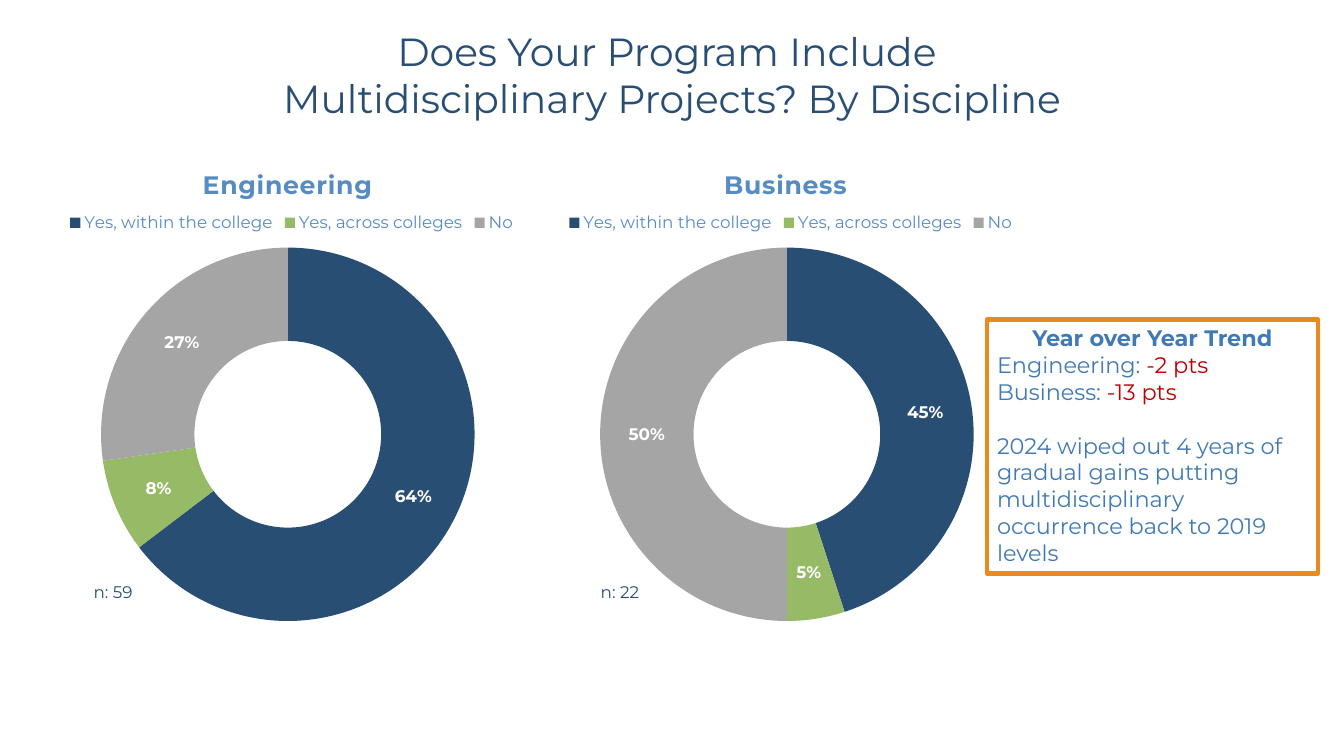
import pptx
import pptx.chart.data
import pptx.dml.color
import pptx.enum.chart
import pptx.enum.shapes
import pptx.enum.text
import pptx.oxml
import pptx.oxml.ns
import pptx.util

Inches = pptx.util.Inches
Pt = pptx.util.Pt
CENTER = pptx.enum.text.PP_ALIGN.CENTER

COLORS = {
    "navy": "294E73",
    "green": "96BA65",
    "gray": "A5A5A5",
    "sky": "558CC3",
    "blue": "407AB4",
    "red": "C00000",
    "orange": "EB891C",
    "white": "FFFFFF",
}
ANSWERS = {
    "Yes, within the college": "navy",
    "Yes, across colleges": "green",
    "No": "gray",
}


class SurveySlide:
    font_name = "Montserrat"

    def __init__(self, deck):
        self.slide = deck.slides.add_slide(deck.slide_layouts[6])

    def color(self, name):
        return pptx.dml.color.RGBColor.from_string(COLORS[name])

    def style(self, font, size, color, bold=False):
        font.name = self.font_name
        font.size = Pt(size)
        font.bold = bold
        font.color.rgb = self.color(color)

    def prepare(self, frame):
        frame.word_wrap = True
        frame.auto_size = pptx.enum.text.MSO_AUTO_SIZE.SHAPE_TO_FIT_TEXT

    def text(self, lines, left, top, width, height, size, align=None):
        box = self.slide.shapes.add_textbox(
            Inches(left), Inches(top), Inches(width), Inches(height))
        frame = box.text_frame
        self.prepare(frame)
        frame.text = "\n".join(lines)
        for paragraph in frame.paragraphs:
            paragraph.alignment = align
            self.style(paragraph.font, size, "navy")

    def place(self, element, successors, **fractions):
        for old in element.findall(pptx.oxml.ns.qn("c:layout")):
            element.remove(old)
        target = '<c:layoutTarget val="inner"/>' if "c:doughnutChart" in successors else ""
        modes = "".join(f'<c:{axis}Mode val="edge"/>' for axis in "xy")
        sizes = "".join(f'<c:{key} val="{value}"/>' for key, value in fractions.items())
        layout = pptx.oxml.parse_xml(
            f'<c:layout {pptx.oxml.ns.nsdecls("c")}><c:manualLayout>'
            f'{target}{modes}{sizes}</c:manualLayout></c:layout>')
        element.insert_element_before(layout, *successors)

    def doughnut(self, discipline, shares, left, title_x):
        data = pptx.chart.data.CategoryChartData()
        data.categories = list(ANSWERS)
        data.add_series("Series 1", shares)
        chart = self.slide.shapes.add_chart(
            pptx.enum.chart.XL_CHART_TYPE.DOUGHNUT, Inches(left), Inches(1.37),
            Inches(7.41), Inches(4.94), data).chart
        self.style(chart.font, 10, "navy")

        chart.has_title = True
        title = chart.chart_title
        title.text_frame.text = discipline
        heading = title.text_frame.paragraphs[0].font
        self.style(heading, 18, "sky", True)
        heading._element.set("spc", "50")
        title.include_in_layout = False
        self.place(title._element, ("c:overlay",), x=title_x, y=0.05)

        chart.has_legend = True
        legend = chart.legend
        legend.position = pptx.enum.chart.XL_LEGEND_POSITION.TOP
        legend.include_in_layout = False
        self.style(legend.font, 12, "sky")
        self.place(legend._element, ("c:overlay", "c:spPr", "c:txPr"),
                   x=0.2, y=0.14, w=0.61, h=0.06)

        plot = chart.plots[0]
        plot.vary_by_categories = True
        plot_area = plot._element.getparent()
        for old in plot_area.findall(pptx.oxml.ns.qn("c:layout")):
            plot_area.remove(old)
        self.place(plot_area, ("c:doughnutChart",), x=0.25, y=0.22, w=0.5, h=0.75)
        for index, name in enumerate(ANSWERS.values()):
            wedge = plot.series[0].points[index].format
            wedge.fill.solid()
            wedge.fill.fore_color.rgb = self.color(name)
            wedge.line.fill.background()

        labels = plot.series[0].data_labels
        labels.show_value = True
        labels.show_percentage = False
        labels.number_format = '0"%"'
        labels.number_format_is_linked = False
        self.style(labels.font, 12, "white", True)

    def trend_box(self, heading, changes, remark):
        box = self.slide.shapes.add_shape(
            pptx.enum.shapes.MSO_SHAPE.RECTANGLE,
            Inches(9.79), Inches(3.17), Inches(3.28), Inches(2.52))
        box.shadow.inherit = False
        box.fill.background()
        box.line.color.rgb = self.color("orange")
        box.line.width = Pt(3)
        frame = box.text_frame
        self.prepare(frame)
        frame.vertical_anchor = pptx.enum.text.MSO_ANCHOR.TOP

        first = frame.paragraphs[0]
        first.text = heading
        first.alignment = CENTER
        self.style(first.font, 16, "blue", True)
        for discipline, change in changes.items():
            line = frame.add_paragraph()
            line.alignment = pptx.enum.text.PP_ALIGN.LEFT
            for words, name in ((f"{discipline}: ", "blue"), (change, "red")):
                run = line.add_run()
                run.text = words
                self.style(run.font, 16, name)
        last = frame.add_paragraph()
        last.text = remark
        last.alignment = pptx.enum.text.PP_ALIGN.LEFT
        last.space_before = Pt(19)
        self.style(last.font, 16, "blue")


def main():
    deck = pptx.Presentation()
    deck.slide_width = Inches(13.33)
    deck.slide_height = Inches(7.5)
    survey = SurveySlide(deck)

    survey.doughnut("Business", (45, 5, 50), 4.1, 0.41)
    survey.text(["n: 22"], 5.86, 5.72, 0.96, 0.3, 12)
    survey.doughnut("Engineering", (64, 8, 27), -0.85, 0.38)
    survey.text(["n: 59"], 0.83, 5.72, 0.96, 0.3, 12)
    survey.text(
        ["Does Your Program Include ", "Multidisciplinary Projects? By Discipline"],
        2.02, 0.22, 9.29, 1.04, 28, CENTER)
    survey.trend_box(
        "Year over Year Trend",
        {"Engineering": "-2 pts", "Business": "-13 pts"},
        "2024 wiped out 4 years of gradual gains putting multidisciplinary "
        "occurrence back to 2019 levels")
    deck.save("out.pptx")


if __name__ == "__main__":
    main()
